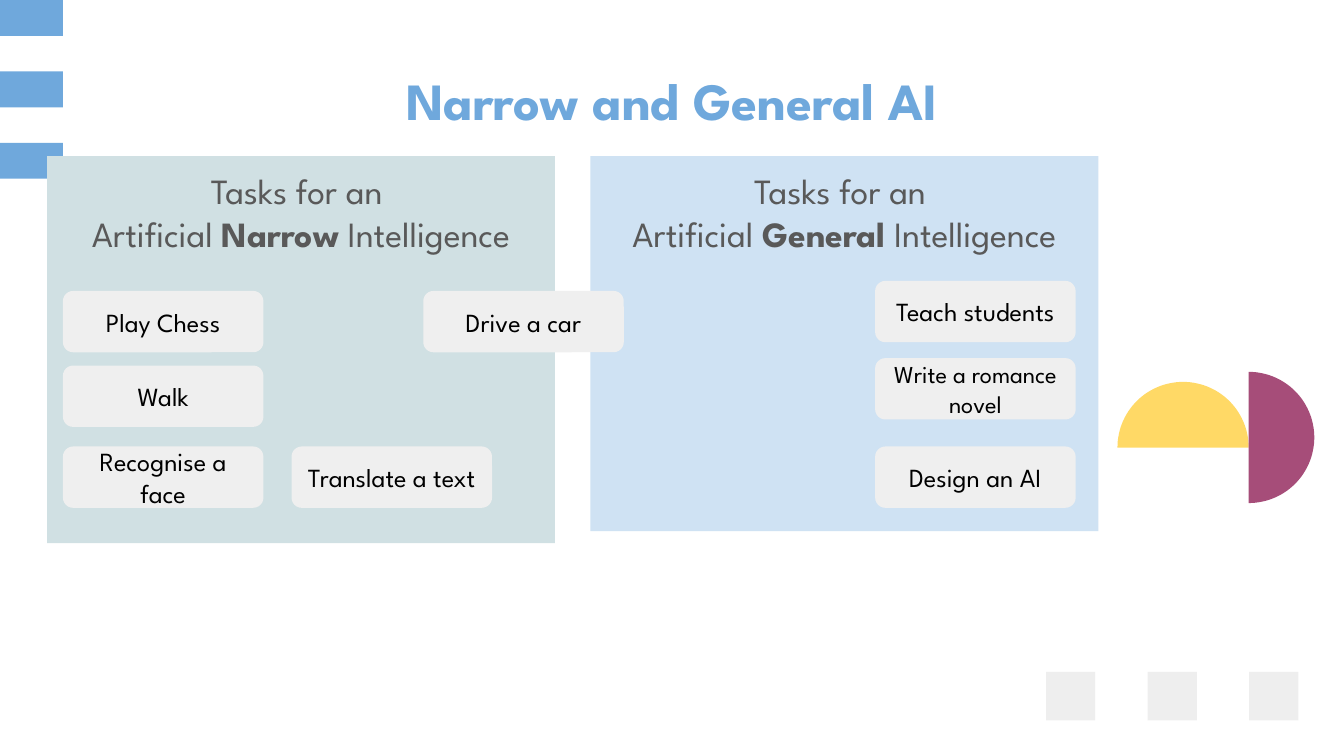
from math import cos, radians, sin

from pptx import Presentation
from pptx.dml.color import RGBColor
from pptx.enum.shapes import MSO_SHAPE as Preset
from pptx.enum.text import MSO_ANCHOR as Anchor, PP_ALIGN as Align
from pptx.util import Cm, Pt

FONT = "League Spartan"
BLUE, TEAL, SKY = "6FA8DC", "D0E0E3", "CFE2F3"
PALE, BUTTON, YELLOW, PURPLE = "EEEEEE", "EFEFEF", "FFD966", "A64D79"
GREY, BLACK = "595959", "000000"


def color(value):
    return RGBColor.from_string(value)


def assign(target, values):
    for name, value in values.items():
        setattr(target, name, value)


class SlideBuilder:
    frame_format = {
        "word_wrap": True,
        "margin_left": Cm(0.25), "margin_right": Cm(0.25),
        "margin_top": Cm(0.25), "margin_bottom": Cm(0.25),
    }

    def __init__(self, slide):
        self.slide = slide

    def paint(self, shape, fill):
        shape.shadow.inherit = False
        shape.fill.solid()
        shape.fill.fore_color.rgb = color(fill)
        shape.line.fill.background()
        return shape

    def block(self, left, top, width, height, fill, preset=Preset.RECTANGLE):
        shape = self.slide.shapes.add_shape(
            preset, Cm(left), Cm(top), Cm(width), Cm(height))
        return self.paint(shape, fill)

    def half_disc(self, x, y, radius, start, fill):
        """Half disc around (x, y), swept clockwise from the start angle."""
        angles = [radians(start + step) for step in range(0, 181, 3)]
        points = [(Cm(x + radius * cos(a)), Cm(y + radius * sin(a))) for a in angles]
        builder = self.slide.shapes.build_freeform(*points[0])
        builder.add_line_segments(points[1:], close=True)
        self.paint(builder.convert_to_shape(), fill)

    def add_text(self, shape, lines, size, ink, anchor=Anchor.MIDDLE, space_after=0):
        """Each line is a list of (text, bold) pairs."""
        frame = shape.text_frame
        assign(frame, {**self.frame_format, "vertical_anchor": anchor})
        paragraph = frame.paragraphs[0]
        assign(paragraph, {"alignment": Align.CENTER, "space_after": Pt(space_after)})
        for number, line in enumerate(lines):
            if number:
                paragraph.add_line_break()
            for text, bold in line:
                run = paragraph.add_run()
                run.text = text
                assign(run.font, {"name": FONT, "size": Pt(size), "bold": bold})
                run.font.color.rgb = color(ink)

    def title(self, text):
        box = self.slide.shapes.add_textbox(Cm(1.98), Cm(1.5), Cm(21.44), Cm(0.76))
        self.add_text(box, [[(text, True)]], 28, BLUE)

    def panel(self, left, height, fill, kind):
        shape = self.block(left, 2.95, 9.6, height, fill)
        lines = [[("Tasks for an ", False)],
                 [("Artificial ", False), (kind, True), (" Intelligence", False)]]
        self.add_text(shape, lines, 19, GREY, Anchor.TOP, 16)

    def task(self, left, top, text, size=14):
        shape = self.block(left, top, 3.79, 1.16, BUTTON, Preset.ROUNDED_RECTANGLE)
        self.add_text(shape, [[(text, False)]], size, BLACK)


def main():
    presentation = Presentation()
    assign(presentation, {"slide_width": Cm(25.4), "slide_height": Cm(14.29)})
    slide = presentation.slides.add_slide(presentation.slide_layouts[6])
    builder = SlideBuilder(slide)

    # Decoration: squares, bars and half discs
    for index in range(3):
        builder.block(19.77 + 1.92 * index, 12.7, 0.93, 0.92, PALE)
        builder.block(0, 1.35 * index, 1.19, 0.68, BLUE)
    builder.half_disc(22.36, 8.46, 1.24, 180, YELLOW)
    builder.half_disc(23.6, 8.27, 1.24, -90, PURPLE)

    # Title and the two panels
    builder.title("Narrow and General AI")
    builder.panel(0.89, 7.32, TEAL, "Narrow")
    builder.panel(11.16, 7.09, SKY, "General")

    # Task buttons
    left_column, right_column = 1.19, 16.54
    first_row, last_row = 5.5, 8.44
    builder.task(left_column, first_row, "Play Chess")
    builder.task(left_column, 6.91, "Walk")
    builder.task(left_column, last_row, "Recognise a face")
    builder.task(8, first_row, "Drive a car")
    builder.task(right_column, 5.31, "Teach students")
    builder.task(5.51, last_row, "Translate a text")
    builder.task(right_column, last_row, "Design an AI")
    builder.task(right_column, 6.77, "Write a romance novel", 13)

    presentation.save("out.pptx")


if __name__ == "__main__":
    main()
